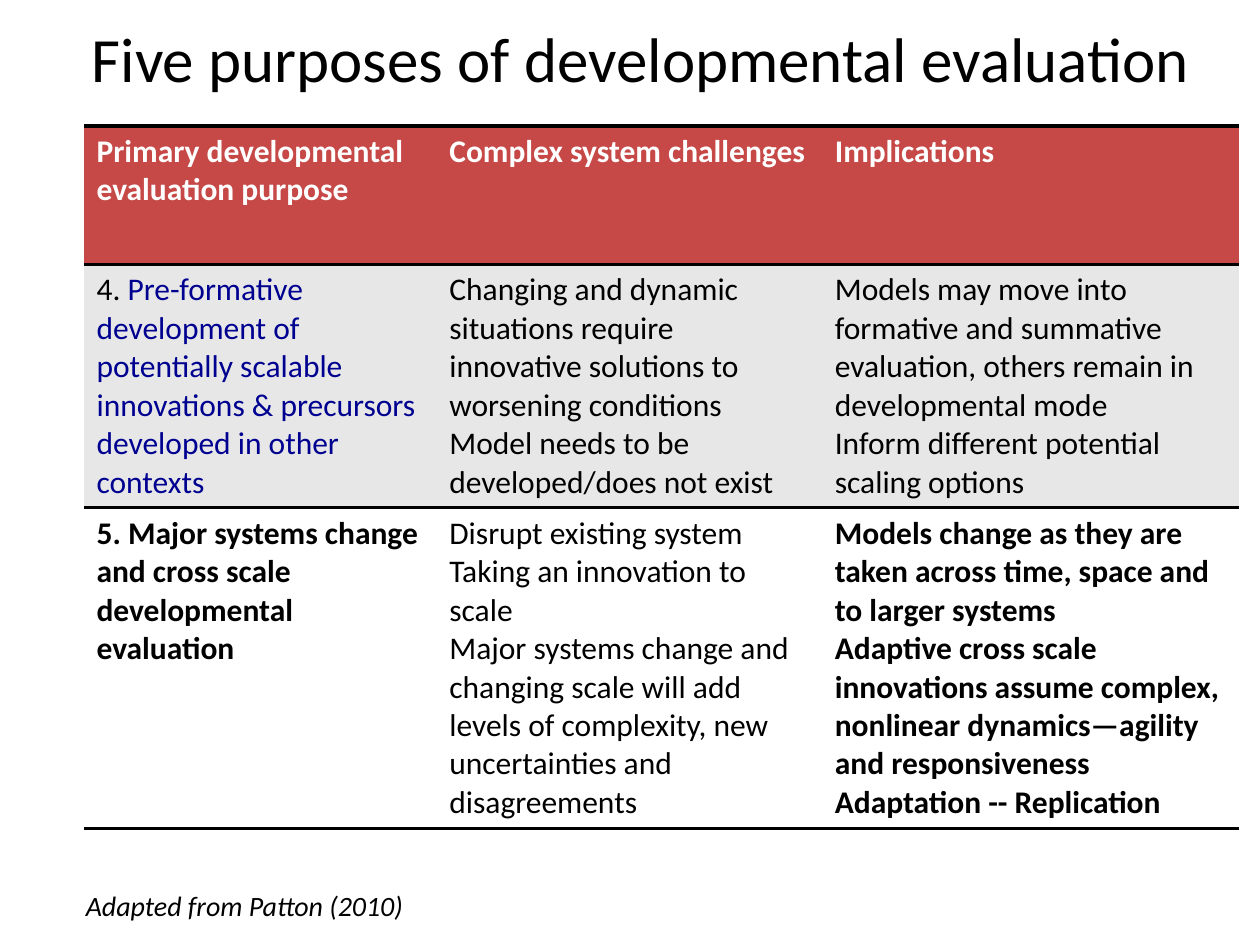
from dataclasses import dataclass

from lxml.etree import SubElement
from pptx import Presentation
from pptx.dml.color import RGBColor
from pptx.enum.text import MSO_ANCHOR, MSO_AUTO_SIZE, PP_ALIGN
from pptx.oxml.ns import qn
from pptx.util import Pt

BLACK, WHITE, RED, GREY, NAVY = "000000", "FFFFFF", "C64847", "E7E7E7", "000090"
NO_STYLE = "{2D5ABB26-0587-4C30-8999-92F81FD0307C}"
COLUMN_WIDTHS = (201.6, 220.3, 238.3)


@dataclass
class Cell:
    paragraphs: list[str]
    bold: bool = False
    color: str = BLACK
    prefix: str = ""


@dataclass
class Row:
    height: float
    fill: str
    cells: list[Cell]
    borders: tuple[str, ...] = ()


ROWS = [
    Row(79.2, RED, [
        Cell(["Primary developmental evaluation purpose"], True, WHITE),
        Cell(["Complex system challenges"], True, WHITE),
        Cell(["Implications"], True, WHITE),
    ], ("a:lnT", "a:lnB")),
    Row(96.5, GREY, [
        Cell(["Pre-formative development of potentially scalable innovations "
              "& precursors developed in other contexts"], color=NAVY, prefix="4. "),
        Cell(["Changing and dynamic situations require innovative solutions "
              "to worsening conditions",
              "Model needs to be developed/does not exist"]),
        Cell(["Models may move into formative and summative evaluation, "
              "others remain in developmental mode",
              "Inform different potential scaling options"]),
    ], ("a:lnT",)),
    Row(151.9, WHITE, [
        Cell(["5. Major systems change and cross scale developmental evaluation"], True),
        Cell(["Disrupt existing system",
              "Taking an innovation to scale",
              "Major systems change and changing scale will add levels of "
              "complexity, new uncertainties and disagreements"]),
        Cell(["Models change as they are taken across time, space and to larger systems",
              "Adaptive cross scale innovations assume complex, nonlinear "
              "dynamics—agility and responsiveness",
              "Adaptation -- Replication"], True),
    ], ("a:lnB",)),
]


def rgb(color: str) -> RGBColor:
    return RGBColor.from_string(color)


def add_text(paragraph, text: str, *, size: float = 18, color: str = BLACK,
             bold: bool = False, italic: bool = False) -> None:
    run = paragraph.add_run()
    run.text = text
    font = run.font
    font.name, font.size = "Calibri", Pt(size)
    font.bold, font.italic = bold, italic
    font.color.rgb = rgb(color)


def add_borders(cell, sides: tuple[str, ...]) -> None:
    properties = cell._tc.get_or_add_tcPr()
    for index, side in enumerate(sides):
        line = SubElement(properties, qn(side), w=str(Pt(2)))
        fill = SubElement(line, qn("a:solidFill"))
        SubElement(fill, qn("a:srgbClr"), val=BLACK)
        properties.insert(index, line)


def fill_cell(cell, content: Cell, row: Row) -> None:
    cell.fill.solid()
    cell.fill.fore_color.rgb = rgb(row.fill)
    add_borders(cell, row.borders)
    frame = cell.text_frame
    for index, text in enumerate(content.paragraphs):
        paragraph = frame.add_paragraph() if index else frame.paragraphs[0]
        if content.prefix:
            add_text(paragraph, content.prefix)
        add_text(paragraph, text, color=content.color, bold=content.bold)


def add_purpose_table(slide) -> None:
    shape = slide.shapes.add_table(
        len(ROWS), len(COLUMN_WIDTHS), Pt(48), Pt(72),
        Pt(sum(COLUMN_WIDTHS)), Pt(sum(row.height for row in ROWS)))
    table = shape.table
    table._tbl.tblPr.find(qn("a:tableStyleId")).text = NO_STYLE
    table.horz_banding = False
    for column, width in zip(table.columns, COLUMN_WIDTHS):
        column.width = Pt(width)
    for table_row, row in zip(table.rows, ROWS):
        table_row.height = Pt(row.height)
        for cell, content in zip(table_row.cells, row.cells):
            fill_cell(cell, content, row)


def add_title(slide) -> None:
    title = slide.shapes.title
    title.left, title.top, title.width, title.height = Pt(42), Pt(-12), Pt(648), Pt(90)
    title.text_frame.vertical_anchor = MSO_ANCHOR.MIDDLE
    paragraph = title.text_frame.paragraphs[0]
    paragraph.alignment = PP_ALIGN.CENTER
    add_text(paragraph, "Five purposes of developmental evaluation", size=36)


def add_credit(slide) -> None:
    frame = slide.shapes.add_textbox(Pt(42), Pt(504), Pt(202), Pt(26.6)).text_frame
    frame.word_wrap = False
    frame.auto_size = MSO_AUTO_SIZE.SHAPE_TO_FIT_TEXT
    add_text(frame.paragraphs[0], "Adapted from Patton (2010)", size=16, italic=True)


def main() -> None:
    presentation = Presentation()
    presentation.slide_width, presentation.slide_height = Pt(720), Pt(540)
    slide = presentation.slides.add_slide(presentation.slide_layouts[5])
    add_title(slide)
    add_purpose_table(slide)
    add_credit(slide)
    presentation.save("out.pptx")


if __name__ == "__main__":
    main()
